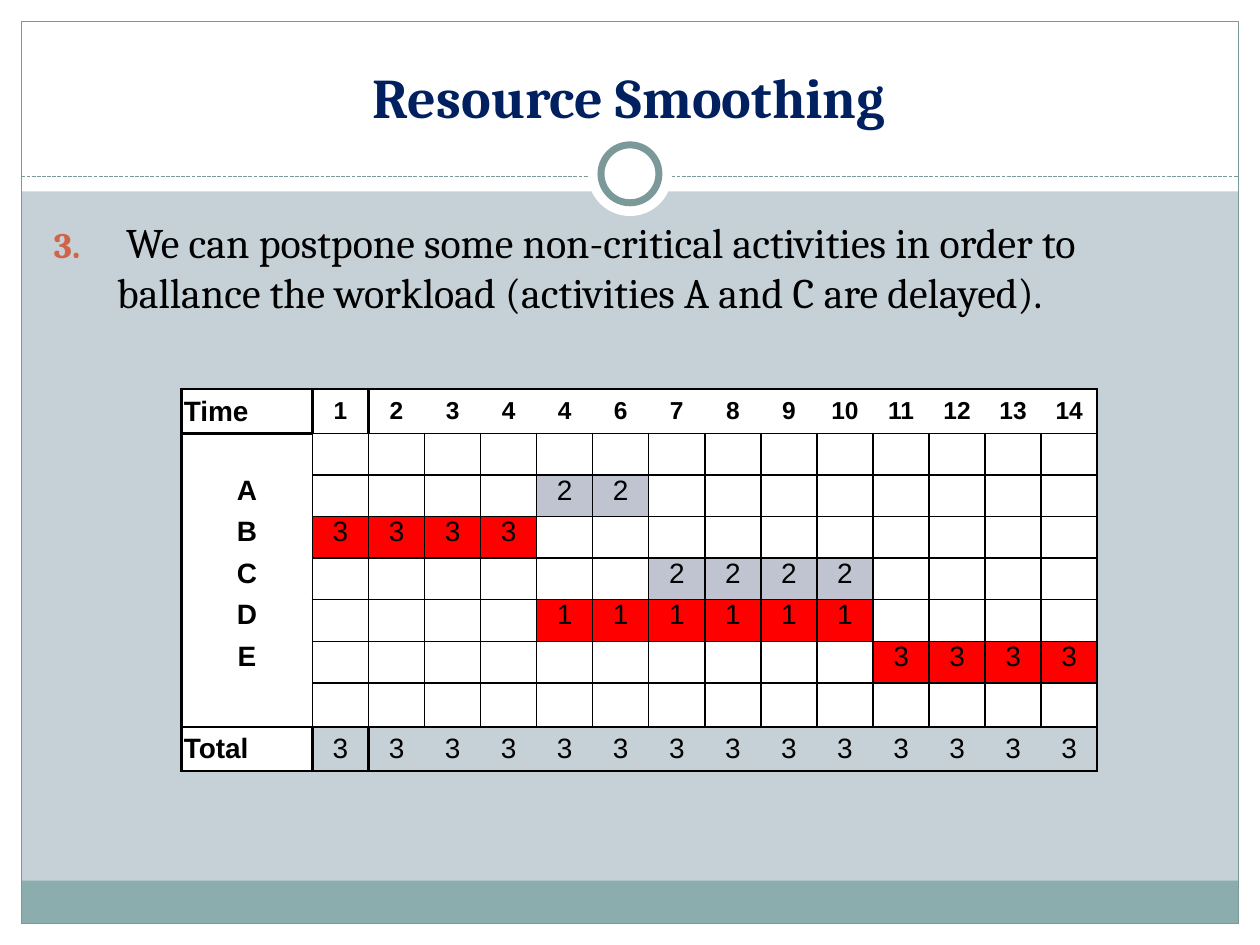
import pptx
import pptx.util
import pptx.dml.color
import pptx.enum.dml
import pptx.enum.shapes
import pptx.enum.text
import pptx.oxml.ns
from lxml import etree

WIDTH, HEIGHT = 10, 7.5
MARGIN = 0.17
COLORS = {
    "page": "C5D1D7", "white": "FFFFFF", "black": "000000", "footer": "8CADAE",
    "frame": "7C999A", "title": "002060", "number": "D16349",
    "floating": "C0C3D0", "critical": "FF0000",
}
DAYS = [1, 2, 3, 4, 4, 6, 7, 8, 9, 10, 11, 12, 13, 14]
ACTIVITIES = [
    ("A", 2, 5, 6, "floating"),
    ("B", 3, 1, 4, "critical"),
    ("C", 2, 7, 10, "floating"),
    ("D", 1, 5, 10, "critical"),
    ("E", 3, 11, 14, "critical"),
]
DAILY_TOTAL = 3
LABEL, FIRST_DAY, LAST_DAY = 1, 2, 15
HEADER, FIRST_ACTIVITY, TOTAL = 1, 3, 9
COLUMN_WIDTHS = [0.54, 1.04] + [6.23 / len(DAYS)] * len(DAYS) + [0.38]
ROW_HEIGHTS = [0.28, 0.35] + [0.33] * 6 + [0.35] * 2
NO_GRID_STYLE = "{2D5ABB26-0587-4C30-8999-92F81FD0307C}"
SHAPES = pptx.enum.shapes.MSO_SHAPE
ALIGN = pptx.enum.text.PP_ALIGN
ANCHOR = pptx.enum.text.MSO_ANCHOR


def rgb(name):
    return pptx.dml.color.RGBColor.from_string(COLORS[name])


def inches(*lengths):
    return [pptx.util.Inches(length) for length in lengths]


def add_element(parent, tag, **attributes):
    return etree.SubElement(parent, pptx.oxml.ns.qn(tag), attributes)


def paint(fill, color):
    if color:
        fill.solid()
        fill.fore_color.rgb = rgb(color)
    else:
        fill.background()


def add_shape(page, kind, at, fill=None, line=None, weight=0.75):
    shape = page.shapes.add_shape(kind, *inches(*at))
    shape.shadow.inherit = False
    paint(shape.fill, fill)
    paint(shape.line.fill, line)
    if line:
        shape.line.width = pptx.util.Pt(weight)


def add_circle(page, diameter, **style):
    at = (WIDTH / 2 - diameter / 2, 1.38 - diameter / 2, diameter, diameter)
    add_shape(page, SHAPES.OVAL, at, "white", **style)


def add_divider(page, y):
    line = page.shapes.add_connector(
        pptx.enum.shapes.MSO_CONNECTOR.STRAIGHT, *inches(MARGIN, y, WIDTH - MARGIN, y))
    line.line.color.rgb = rgb("frame")
    line.line.width = pptx.util.Pt(0.75)
    line.line.dash_style = pptx.enum.dml.MSO_LINE.SQUARE_DOT
    add_element(line._element.spPr, "a:effectLst")


def format_text(para, size, font, color="black", bold=False):
    for span in para.runs:
        span.font.size = pptx.util.Pt(size)
        span.font.name = font
        span.font.bold = bold
        span.font.color.rgb = rgb(color)


def add_text(page, at, text, anchor):
    box = page.shapes.add_textbox(*inches(*at))
    frame = box.text_frame
    frame.word_wrap = True
    frame.vertical_anchor = anchor
    frame.text = text
    return frame.paragraphs[0]


def number_paragraph(para, start):
    properties = para._p.get_or_add_pPr()
    indent = pptx.util.Inches(0.5)
    properties.set("marL", str(indent))
    properties.set("indent", str(-indent))
    color = add_element(properties, "a:buClr")
    add_element(color, "a:srgbClr", val=COLORS["number"])
    add_element(properties, "a:buSzPct", val="85000")
    add_element(properties, "a:buFont", typeface="Cambria")
    add_element(properties, "a:buAutoNum", type="arabicPeriod", startAt=str(start))


def add_backdrop(page):
    paint(page.background.fill, "page")
    inner = WIDTH - 2 * MARGIN
    bands = [
        (0, HEIGHT - MARGIN, WIDTH, MARGIN),
        (0, 0, WIDTH, 1.52),
        (0, 0, MARGIN, HEIGHT),
        (WIDTH - MARGIN, 0, MARGIN, HEIGHT),
    ]
    for band in bands:
        add_shape(page, SHAPES.RECTANGLE, band, "white")
    add_shape(page, SHAPES.RECTANGLE, (MARGIN, 6.99, inner, 0.34), "footer")
    add_shape(page, SHAPES.RECTANGLE,
              (MARGIN, MARGIN, inner, HEIGHT - 2 * MARGIN), line="frame")
    add_divider(page, 1.4)
    add_circle(page, 0.67)
    add_circle(page, 0.46, line="frame", weight=4)


def cell_borders(row, col):
    if row < HEADER or not LABEL <= col <= LAST_DAY:
        return {}
    edge_row = row in (HEADER, TOTAL)
    if col == LABEL:
        return dict.fromkeys("LRTB", 1.5) if edge_row else {"L": 1.5, "R": 1}
    if not edge_row:
        return dict.fromkeys("LRTB", 1)
    borders = {"T": 1.5, "B": 1} if row == HEADER else {"T": 1, "B": 1.5}
    if col == FIRST_DAY:
        borders["L"] = 1.5
    if col == LAST_DAY:
        borders["R"] = 1.5
    return borders


def draw_borders(cell, borders):
    properties = cell._tc.get_or_add_tcPr()
    for side in "LRTB":
        if side in borders:
            line = add_element(properties, "a:ln" + side,
                               w=str(pptx.util.Pt(borders[side])))
            fill = add_element(line, "a:solidFill")
            add_element(fill, "a:srgbClr", val=COLORS["black"])


def cell_fill(row, col):
    if row < HEADER or not LABEL <= col <= LAST_DAY:
        return None
    return None if row == TOTAL and col > LABEL else "white"


def schedule_entries():
    entries = {(HEADER, LABEL): ("Time", "white"), (TOTAL, LABEL): ("Total", "white")}
    for col, day in enumerate(DAYS, FIRST_DAY):
        entries[HEADER, col] = (str(day), "white")
        entries[TOTAL, col] = (str(DAILY_TOTAL), None)
    for row, (name, workers, start, end, kind) in enumerate(ACTIVITIES, FIRST_ACTIVITY):
        entries[row, LABEL] = (name, "white")
        for day in range(start, end + 1):
            entries[row, LABEL + day] = (str(workers), kind)
    return entries


def fill_cell(cell, row, col, text, color):
    edge_row = row in (HEADER, TOTAL)
    draw_borders(cell, cell_borders(row, col))
    paint(cell.fill, color)
    cell.margin_left = cell.margin_right = pptx.util.Inches(0.02)
    cell.margin_top = cell.margin_bottom = 0
    cell.vertical_anchor = ANCHOR.MIDDLE if edge_row else ANCHOR.TOP
    para = cell.text_frame.paragraphs[0]
    if not text:
        add_element(para._p, "a:endParaRPr", sz="1200")
        return
    para.text = text
    para.alignment = ALIGN.LEFT if edge_row and col == LABEL else ALIGN.CENTER
    size = 14 if row == HEADER and col > LABEL else 16
    format_text(para, size, "Arial", bold=row == HEADER or col == LABEL)


def add_schedule(page):
    at = (0.9, 2.81, sum(COLUMN_WIDTHS), sum(ROW_HEIGHTS))
    table = page.shapes.add_table(
        len(ROW_HEIGHTS), len(COLUMN_WIDTHS), *inches(*at)).table
    table.first_row = table.horz_banding = False
    table._tbl.tblPr.find(pptx.oxml.ns.qn("a:tableStyleId")).text = NO_GRID_STYLE
    for column, width in zip(table.columns, COLUMN_WIDTHS):
        column.width = pptx.util.Inches(width)
    entries = schedule_entries()
    for row, height in enumerate(ROW_HEIGHTS):
        table.rows[row].height = pptx.util.Inches(height)
        for col in range(len(COLUMN_WIDTHS)):
            text, color = entries.get((row, col), ("", cell_fill(row, col)))
            fill_cell(table.cell(row, col), row, col, text, color)


def main():
    deck = pptx.Presentation()
    deck.slide_width, deck.slide_height = inches(WIDTH, HEIGHT)
    page = deck.slides.add_slide(deck.slide_layouts[6])
    add_backdrop(page)
    title = add_text(page, (0.33, 0.25, 9.33, 0.83), "Resource Smoothing", ANCHOR.BOTTOM)
    title.alignment = ALIGN.CENTER
    format_text(title, 32, "Cambria", "title", bold=True)
    body = add_text(page, (0.33, 1.67, 9.36, 5), " ", ANCHOR.TOP)
    number_paragraph(body, 3)
    body.add_run().text = (
        "We can postpone some non-critical activities in order to "
        "ballance the workload (activities A and C are delayed).")
    format_text(body, 24, "Cambria")
    body.runs[0].font.bold = True
    add_schedule(page)
    deck.save("out.pptx")


if __name__ == "__main__":
    main()
